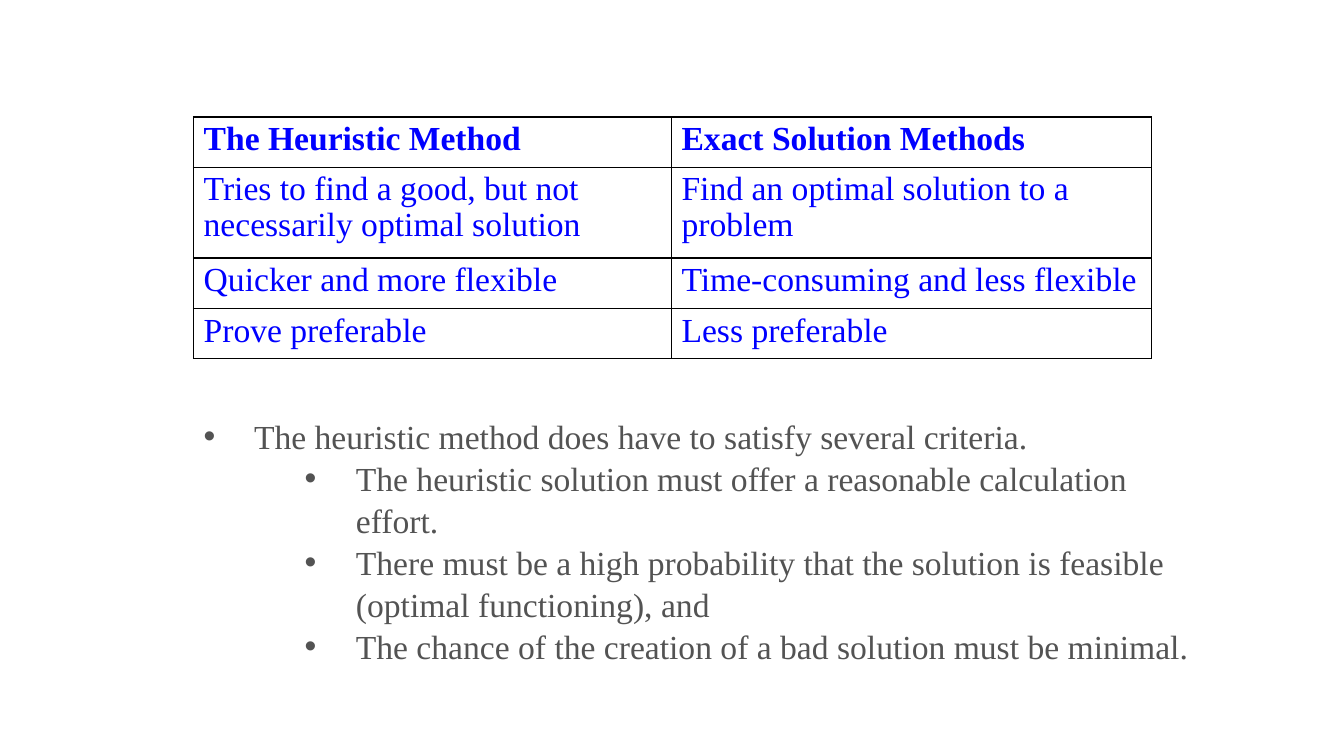
from lxml import etree
from pptx import Presentation
from pptx import util as u
from pptx.dml import color
from pptx.enum import text
from pptx.oxml import ns

ROWS = [
    ("The Heuristic Method", "Exact Solution Methods"),
    ("Tries to find a good, but not necessarily optimal solution",
     "Find an optimal solution to a problem"),
    ("Quicker and more flexible", "Time-consuming and less flexible"),
    ("Prove preferable", "Less preferable"),
]
WIDTHS = (4.74, 4.76)
HEIGHTS = (0.5, 0.9, 0.5, 0.5)
POINTS = [
    (0, "The heuristic method does have to satisfy several criteria."),
    (2, "The heuristic solution must offer a reasonable calculation effort."),
    (2, "There must be a high probability that the solution is feasible (optimal functioning), and"),
    (2, "The chance of the creation of a bad solution must be minimal."),
]
INDENTS = {0: (0.5, -0.5), 2: (1.51, -0.51)}
FONT = {"name": "Times New Roman", "size": u.Pt(24)}


def paint(part, tone):
    part.rgb = color.RGBColor.from_string(tone)


def put(item, values):
    for key, value in values.items():
        setattr(item, key, value)


def write(para, words, tone, gap, bold=False):
    run = para.add_run()
    run.text = words
    put(run.font, {**FONT, "bold": bold})
    paint(run.font.color, tone)
    put(para, {"line_spacing": gap, "space_before": u.Pt(0), "space_after": u.Pt(0)})


def edge(cell, tone):
    props = cell._tc.get_or_add_tcPr()
    for spot, side in enumerate(("lnL", "lnR", "lnT", "lnB")):
        line = etree.Element(ns.qn("a:" + side), w=str(u.Pt(1)))
        fill = etree.SubElement(line, ns.qn("a:solidFill"))
        etree.SubElement(fill, ns.qn("a:srgbClr"), val=tone)
        props.insert(spot, line)


def compare(slide, box):
    frame = slide.shapes.add_table(len(ROWS), len(WIDTHS), *map(u.Inches, box))
    table = frame.table
    put(table, {"first_row": False, "horz_banding": False})
    for column, width in zip(table.columns, WIDTHS):
        column.width = u.Inches(width)
    for row, height, words in zip(table.rows, HEIGHTS, ROWS):
        row.height = u.Inches(height)
        for cell, label in zip(row.cells, words):
            cell.fill.solid()
            paint(cell.fill.fore_color, "FFFFFF")
            edge(cell, "000000")
            write(cell.text_frame.paragraphs[0], label, "0000FF", 0.96, words is ROWS[0])


def listing(body, box):
    put(body, dict(zip(("left", "top", "width", "height"), map(u.Inches, box))))
    frame = body.text_frame
    put(frame, {"word_wrap": True, "auto_size": text.MSO_AUTO_SIZE.NONE,
                "vertical_anchor": text.MSO_ANCHOR.TOP})
    for spot, (level, words) in enumerate(POINTS):
        para = frame.add_paragraph() if spot else frame.paragraphs[0]
        para.level = level
        write(para, words, "535353", 1.04)
        props = para._p.get_or_add_pPr()
        for key, size in zip(("marL", "indent"), INDENTS[level]):
            props.set(key, str(u.Inches(size)))
        etree.SubElement(props, ns.qn("a:buFont"), typeface="Arial")
        etree.SubElement(props, ns.qn("a:buChar"), char="•")


def main():
    deck = Presentation()
    put(deck, {"slide_width": u.Inches(13.33), "slide_height": u.Inches(7.5)})
    slide = deck.slides.add_slide(deck.slide_layouts[1])
    title = slide.shapes.title._element
    title.getparent().remove(title)
    listing(slide.placeholders[1], (1.92, 4.06, 10.14, 2.52))
    compare(slide, (1.92, 1.16, sum(WIDTHS), sum(HEIGHTS)))
    deck.save("out.pptx")


if __name__ == "__main__":
    main()
